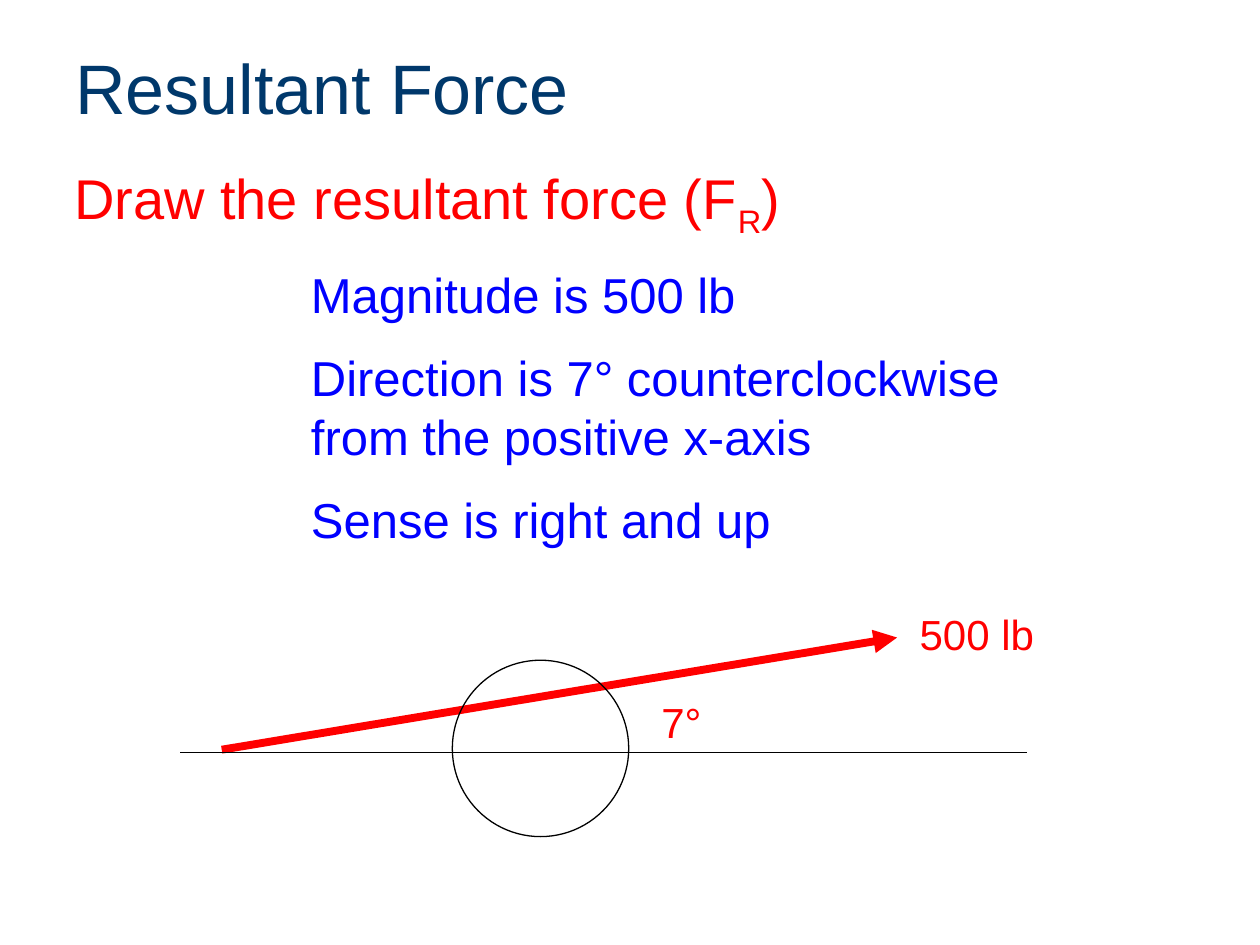
"""Build the resultant force slide with its vector diagram."""
from lxml import etree
from pptx import Presentation
from pptx.dml.color import RGBColor
from pptx.enum.shapes import MSO_CONNECTOR, MSO_SHAPE
from pptx.enum.text import MSO_ANCHOR
from pptx.oxml.ns import qn
from pptx.util import Inches, Pt

STRAIGHT = MSO_CONNECTOR.STRAIGHT
ARC = MSO_SHAPE.ARC
TOP, MIDDLE = MSO_ANCHOR.TOP, MSO_ANCHOR.MIDDLE
NAVY = RGBColor(0x00, 0x38, 0x6B)
RED = RGBColor(0xFF, 0x00, 0x00)
BLUE = RGBColor(0x00, 0x00, 0xFF)
BLACK = RGBColor(0x00, 0x00, 0x00)

deck = Presentation()
deck.slide_width, deck.slide_height = Inches(10), Inches(7.5)
page = deck.slides.add_slide(deck.slide_layouts[6])


def add_text(area, paragraphs, size, color, gap=0, anchor=TOP, wrap=True):
    box = page.shapes.add_textbox(*map(Inches, area))
    frame = box.text_frame
    frame.word_wrap, frame.vertical_anchor = wrap, anchor
    for index, pieces in enumerate(paragraphs):
        para = frame.paragraphs[0] if index == 0 else frame.add_paragraph()
        para.space_before = Pt(size * gap)
        for text, baseline in pieces:
            span = para.add_run()
            span.text = text
            span.font.color.rgb = color
            for name, value in {"name": "Arial", "size": Pt(size)}.items():
                setattr(span.font, name, value)
            if baseline:
                span.font._element.set("baseline", str(baseline * 1000))


def add_line(start, end, color, width):
    line = page.shapes.add_connector(STRAIGHT, *map(Inches, start + end))
    line.line.color.rgb, line.line.width = color, Pt(width)
    etree.SubElement(line._element.spPr, qn("a:effectLst"))
    return line


facts = [
    "Magnitude is 500 lb",
    "Direction is 7° counterclockwise from the positive x-axis",
    "Sense is right and up",
]
task = [("Draw the resultant force (F", 0), ("R", -25), (")", 0)]

add_text((0.5, 0.3, 9, 0.78), [[("Resultant Force", 0)]], 40, NAVY, anchor=MIDDLE)
add_text((0.49, 1.25, 7.98, 0.83), [task], 32, RED, gap=0.2)
add_text((2.37, 2.05, 6.14, 2.44), [[(fact, 0)] for fact in facts], 28, BLUE, gap=0.5)

force = add_line((1.76, 5.95), (7.12, 5.06), RED, 4.5)
etree.SubElement(force.line._get_or_add_ln(), qn("a:tailEnd"), type="triangle")
add_line((1.43, 5.97), (8.15, 5.97), BLACK, 0.75)

center_x, center_y, radius = 4.29, 5.94, 0.7
angle = page.shapes.add_shape(
    ARC, Inches(center_x - radius), Inches(center_y - radius),
    Inches(2 * radius), Inches(2 * radius))
angle.adjustments[0], angle.adjustments[1] = -45, 0
angle.fill.background()
angle.line.color.rgb, angle.line.width = BLACK, Pt(0.75)
angle.shadow.inherit = False

add_text((5.15, 5.48, 0.97, 0.5), [[("7°", 0)]], 24, RED)
add_text((7.2, 4.78, 1.11, 0.5), [[("500 lb", 0)]], 24, RED, gap=0.5, wrap=False)

deck.save("out.pptx")
